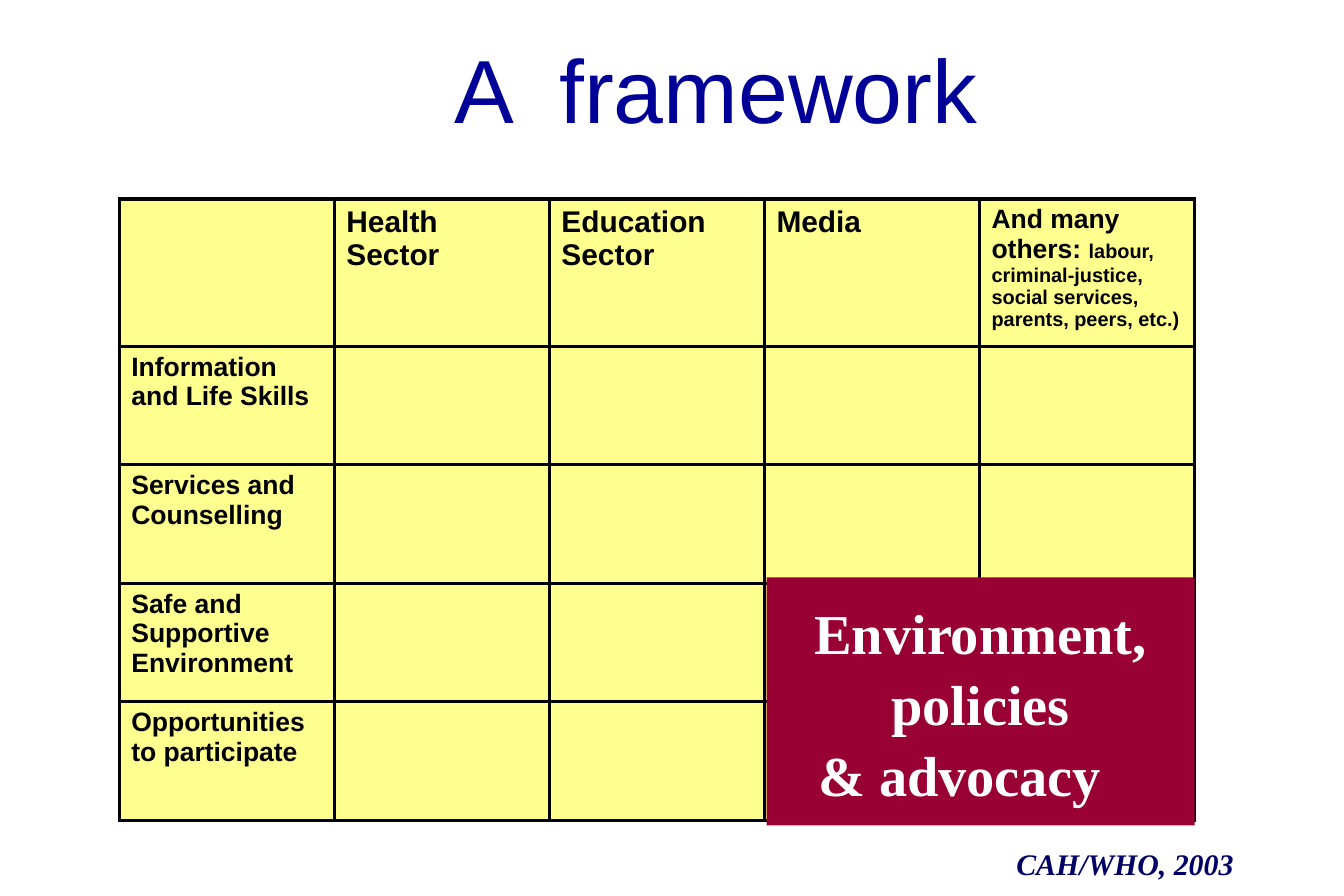
from lxml.etree import SubElement
from pptx import Presentation
from pptx.dml.color import RGBColor
from pptx.enum.shapes import MSO_SHAPE
from pptx.enum.text import MSO_ANCHOR, PP_ALIGN
from pptx.oxml.ns import qn
from pptx.util import Emu, Pt

SANS, SERIF = "Arial", "Times New Roman"
BLACK, WHITE, YELLOW, MAROON = "000000", "FFFFFF", "FFFF8F", "990033"
TITLE_BLUE, NAVY = "000099", "000066"
SECTORS = ["Health Sector", "Education Sector", "Media"]
OTHERS = [("And many others: ", 16),
          ("labour, criminal-justice, social services, parents, peers, etc.)", 12)]
AREAS = ["Information and Life Skills", "Services and Counselling",
         "Safe and Supportive Environment", "Opportunities to participate"]


def px(n):
    return Emu(n * 7620)


def rgb(value):
    return RGBColor.from_string(value)


class Deck:
    """Build the framework slide from a few kinds of element."""

    def __init__(self, width, height):
        self.prs = Presentation()
        self.prs.slide_width, self.prs.slide_height = px(width), px(height)
        self.slide = self.prs.slides.add_slide(self.prs.slide_layouts[5])

    def style(self, font, size, color, name=SANS, bold=True, italic=False):
        font.name, font.size, font.bold, font.italic = name, Pt(size), bold, italic
        font.color.rgb = rgb(color)

    def title(self, text, *box):
        sp = self.slide.shapes.title
        sp.left, sp.top, sp.width, sp.height = map(px, box)
        tf = sp.text_frame
        tf.text = text
        tf.vertical_anchor = MSO_ANCHOR.MIDDLE
        p = tf.paragraphs[0]
        p.alignment = PP_ALIGN.CENTER
        self.style(p.font, 54, TITLE_BLUE, bold=False)

    def credit(self, text, *box):
        tf = self.slide.shapes.add_textbox(*map(px, box)).text_frame
        tf.word_wrap = False
        tf.text = text
        self.style(tf.paragraphs[0].font, 18, NAVY, SERIF, italic=True)

    def cell(self, cell, runs):
        cell.fill.solid()
        cell.fill.fore_color.rgb = rgb(YELLOW)
        p = cell.text_frame.paragraphs[0]
        for text, size in runs:
            r = p.add_run()
            r.text = text
            self.style(r.font, size, BLACK)
        tc_pr = cell._tc.get_or_add_tcPr()
        for i, side in enumerate(("lnL", "lnR", "lnT", "lnB")):
            ln = tc_pr.makeelement(qn(f"a:{side}"), {"w": str(Pt(2.25))})
            fill = SubElement(ln, qn("a:solidFill"))
            SubElement(fill, qn("a:srgbClr"), val=BLACK)
            tc_pr.insert(i, ln)

    def table(self, rows, left, top, col_width, heights):
        cols = len(rows[0])
        table = self.slide.shapes.add_table(
            len(rows), cols, px(left), px(top),
            px(col_width * cols), px(sum(heights))).table
        for col in table.columns:
            col.width = px(col_width)
        for i, (row, height) in enumerate(zip(rows, heights)):
            table.rows[i].height = px(height)
            for j, runs in enumerate(row):
                self.cell(table.cell(i, j), runs)

    def panel(self, lines, shift, *box):
        sp = self.slide.shapes.add_shape(MSO_SHAPE.RECTANGLE, *map(px, box))
        sp.shadow.inherit = False
        sp.fill.solid()
        sp.fill.fore_color.rgb = rgb(MAROON)
        sp.line.fill.background()
        tf = sp.text_frame
        tf.word_wrap = True
        tf.vertical_anchor = MSO_ANCHOR.MIDDLE
        tf.margin_left, tf.margin_right = 0, px(shift)
        tf.text = "\n".join(lines)
        for p in tf.paragraphs:
            p.alignment = PP_ALIGN.CENTER
            p.line_spacing = 1.05
            self.style(p.font, 34, WHITE, SERIF)
        for p in tf.paragraphs[:-1]:
            p._p.get_or_add_pPr().set("marL", str(px(shift)))


def main():
    deck = Deck(1350, 900)
    deck.title("A  framework", 146, 40, 1147, 97)
    header = [[]] + [[(name, 18)] for name in SECTORS] + [OTHERS]
    body = [[[(area, 16)]] + [[]] * 4 for area in AREAS]
    deck.table([header] + body, 120, 200, 216, [148] + [119] * 4)
    deck.panel(["Environment,", "policies", "& advocacy"], 42, 770, 580, 430, 249)
    deck.credit("CAH/WHO, 2003", 1009, 844, 272, 48)
    deck.prs.save("out.pptx")


if __name__ == "__main__":
    main()
